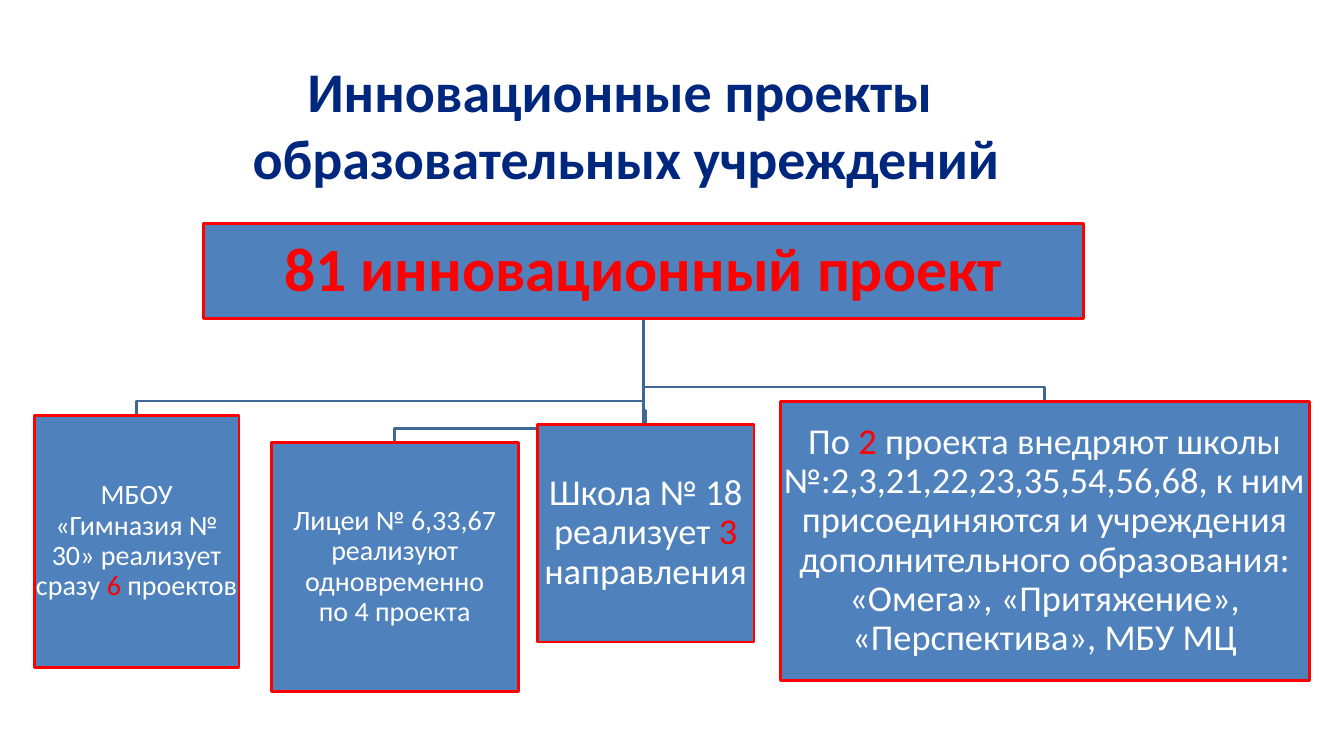
from dataclasses import dataclass

from pptx import Presentation
from pptx.dml.color import RGBColor
from pptx.enum.shapes import MSO_SHAPE as Preset
from pptx.enum.text import MSO_ANCHOR as Anchor, MSO_AUTO_SIZE as AutoSize, PP_ALIGN as Align
from pptx.util import Inches, Pt


@dataclass(frozen=True)
class Theme:
    font: str = "Calibri"
    navy: str = "00277E"
    red: str = "FF0000"
    white: str = "FFFFFF"
    box_fill: str = "4F81BD"
    branch: str = "3F6797"
    line_width: float = 2
    title_size: int = 40
    root_size: int = 44
    large_size: int = 26
    small_size: int = 20
    inset: float = 1
    line_spacing: float = 0.9


@dataclass(frozen=True)
class Span:
    text: str
    color: str
    bold: bool = False


@dataclass(frozen=True)
class Area:
    left: float
    top: float
    width: float
    height: float

    @property
    def middle(self) -> float:
        return self.left + self.width / 2

    @property
    def bottom(self) -> float:
        return self.top + self.height


@dataclass(frozen=True)
class Box:
    area: Area
    size: int
    paras: tuple


THEME = Theme()
SLIDE_WIDTH = Inches(13.33)
SLIDE_HEIGHT = Inches(7.5)
BEND_GAP = 1.87

TITLE_AREA = Area(3.15, 7.33, 86.85, 18)
TITLE_LINES = ("Инновационные проекты ", "образовательных учреждений")


def plain(text: str) -> Span:
    return Span(text, THEME.white)


def accent(text: str, bold: bool = False) -> Span:
    return Span(text, THEME.red, bold)


ROOT = Box(Area(15.15, 29.6, 65.48, 12.53), THEME.root_size,
           ((accent("81 инновационный проект", True),),))

LEAVES = (
    Box(Area(2.55, 54.93, 15.23, 33.33), THEME.small_size,
        ((plain("МБОУ «Гимназия № 30» реализует сразу "), accent("6 "), plain("проектов")),)),
    Box(Area(20.18, 58.53, 18.38, 32.93), THEME.small_size,
        ((plain("Лицеи № 6,33,67 реализуют"),),
         (plain("одновременно"),),
         (plain("по 4 проекта"),))),
    Box(Area(39.98, 56.13, 16.13, 28.8), THEME.large_size,
        ((plain("Школа № 18 реализует "), accent("3"), plain(" направления")),)),
    Box(Area(58.05, 53.07, 39.38, 36.93), THEME.large_size,
        ((plain("По "), accent("2"),
          plain(" проекта внедряют школы №:2,3,21,22,23,35,54,56,68, к ним присоединяются "
                "и учреждения дополнительного образования: «Омега», «Притяжение», "
                "«Перспектива», МБУ МЦ")),)),
)


def across(share: float) -> int:
    return round(SLIDE_WIDTH * share / 100)


def down(share: float) -> int:
    return round(SLIDE_HEIGHT * share / 100)


def apply(target, values: dict) -> None:
    for name, value in values.items():
        setattr(target, name, value)


def place(area: Area) -> dict:
    return {"left": across(area.left), "top": down(area.top),
            "width": across(area.width), "height": down(area.height)}


def frame_format(inset: float, auto_size: AutoSize) -> dict:
    margins = {f"margin_{side}": Pt(inset) for side in ("left", "top", "right", "bottom")}
    return margins | {"word_wrap": True, "vertical_anchor": Anchor.MIDDLE, "auto_size": auto_size}


def add_span(para, span: Span, size: int) -> None:
    run = para.add_run()
    run.text = span.text
    apply(run.font, {"name": THEME.font, "size": Pt(size), "bold": span.bold})
    run.font.color.rgb = RGBColor.from_string(span.color)


def set_line(shape, color: str) -> None:
    shape.line.color.rgb = RGBColor.from_string(color)
    shape.line.width = Pt(THEME.line_width)
    shape.shadow.inherit = False


def draw_title(page) -> None:
    title = page.shapes.title
    apply(title, place(TITLE_AREA))
    apply(title.text_frame, frame_format(0, AutoSize.SHAPE_TO_FIT_TEXT))
    para = title.text_frame.paragraphs[0]
    para.alignment = Align.CENTER
    for number, text in enumerate(TITLE_LINES):
        if number:
            para.add_line_break()
        add_span(para, Span(text, THEME.navy, True), THEME.title_size)


def draw_branch(page, leaf: Box) -> None:
    start, end = ROOT.area, leaf.area
    bend = down(end.top - BEND_GAP)
    builder = page.shapes.build_freeform(across(start.middle), down(start.bottom))
    builder.add_line_segments(
        [(across(start.middle), bend), (across(end.middle), bend),
         (across(end.middle), down(end.top))], close=False)
    branch = builder.convert_to_shape()
    branch.fill.background()
    set_line(branch, THEME.branch)


def draw_box(page, box: Box) -> None:
    shape = page.shapes.add_shape(Preset.RECTANGLE, **place(box.area))
    shape.fill.solid()
    shape.fill.fore_color.rgb = RGBColor.from_string(THEME.box_fill)
    set_line(shape, THEME.red)
    frame = shape.text_frame
    apply(frame, frame_format(THEME.inset, AutoSize.NONE))
    for number, spans in enumerate(box.paras):
        para = frame.add_paragraph() if number else frame.paragraphs[0]
        apply(para, {"alignment": Align.CENTER, "line_spacing": THEME.line_spacing})
        for span in spans:
            add_span(para, span, box.size)


def main() -> None:
    deck = Presentation()
    apply(deck, {"slide_width": SLIDE_WIDTH, "slide_height": SLIDE_HEIGHT})
    page = deck.slides.add_slide(deck.slide_layouts[5])
    draw_title(page)
    for leaf in reversed(LEAVES):
        draw_branch(page, leaf)
    for box in (ROOT, *LEAVES):
        draw_box(page, box)
    deck.save("out.pptx")


if __name__ == "__main__":
    main()
